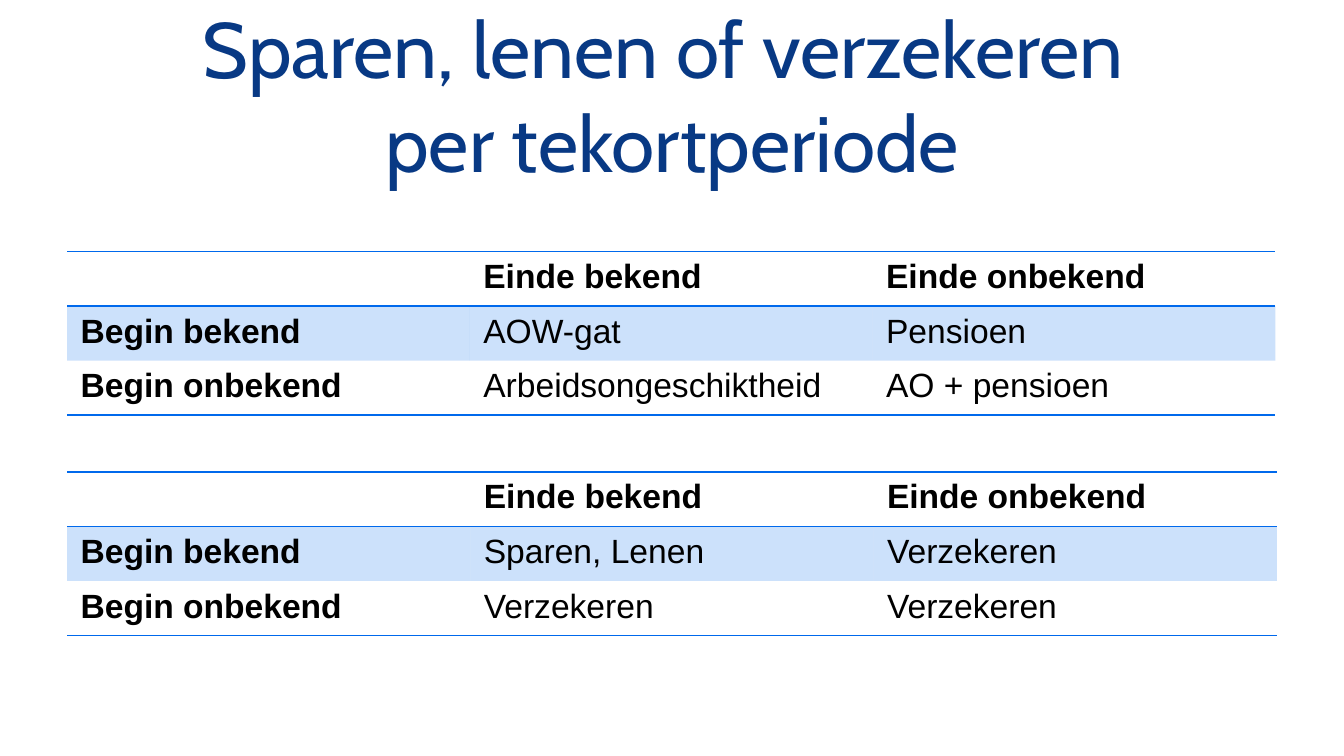
from lxml import etree
from pptx import Presentation
from pptx.dml.color import RGBColor
from pptx.enum.text import MSO_ANCHOR, PP_ALIGN
from pptx.oxml.ns import qn
from pptx.util import Inches, Pt

CENTER = PP_ALIGN.CENTER
LEFT = PP_ALIGN.LEFT
MIDDLE = MSO_ANCHOR.MIDDLE

COLORS = {"title": "083984", "text": "000000", "accent": "0069EC"}
NO_STYLE = "{2D5ABB26-0587-4C30-8999-92F81FD0307C}"
HEADER = ["", "Einde bekend", "Einde onbekend"]


def add_text(tf, text, font="Arial", size=18, color="text", bold=False, align=LEFT):
    p = tf.paragraphs[0]
    p.text = text
    p.alignment = align
    for f in [p.font] + [r.font for r in p.runs]:
        f.name = font
        f.size = Pt(size)
        f.bold = bold
        f.color.rgb = RGBColor.from_string(COLORS[color])


class SlideBuilder:
    def __init__(self, slide):
        self.slide = slide
        self.table_height = 1.22
        self.line_width = 1
        self.band_alpha = 20

    def title(self, text, left, top, width, height):
        tf = self.slide.shapes.add_textbox(
            Inches(left), Inches(top), Inches(width), Inches(height)
        ).text_frame
        tf.word_wrap = True
        tf.vertical_anchor = MIDDLE
        add_text(tf, text, font="Cabin", size=42, color="title", align=CENTER)

    def border(self, cell, side):
        ln = etree.SubElement(cell._tc.get_or_add_tcPr(), qn(f"a:ln{side}"))
        ln.set("w", str(Pt(self.line_width)))
        fill = etree.SubElement(ln, qn("a:solidFill"))
        etree.SubElement(fill, qn("a:srgbClr"), val=COLORS["accent"])

    def band(self, cell):
        cell.fill.solid()
        cell.fill.fore_color.rgb = RGBColor.from_string(COLORS["accent"])
        clr = cell._tc.tcPr.find(qn("a:solidFill")).find(qn("a:srgbClr"))
        etree.SubElement(clr, qn("a:alpha"), val=str(self.band_alpha * 1000))

    def table(self, rows, left, top, width):
        n_rows, n_cols = len(rows), len(rows[0])
        table = self.slide.shapes.add_table(
            n_rows, n_cols, Inches(left), Inches(top),
            Inches(width), Inches(self.table_height)
        ).table
        table._tbl.tblPr.find(qn("a:tableStyleId")).text = NO_STYLE
        table.horz_banding = False
        for i, row in enumerate(rows):
            for j, text in enumerate(row):
                cell = table.cell(i, j)
                add_text(cell.text_frame, text, bold=i == 0 or j == 0)
                if i == 0:
                    self.border(cell, "T")
                if i in (0, n_rows - 1):
                    self.border(cell, "B")
                if i % 2:
                    self.band(cell)
                else:
                    cell.fill.background()


def main():
    prs = Presentation()
    prs.slide_width = Inches(10)
    prs.slide_height = prs.slide_width * 9 // 16
    s = SlideBuilder(prs.slides.add_slide(prs.slide_layouts[6]))
    s.title("Sparen, lenen of verzekeren \vper tekortperiode", 0.5, 0.23, 9, 0.94)
    s.table([
        HEADER,
        ["Begin bekend", "Sparen, Lenen", "Verzekeren"],
        ["Begin onbekend", "Verzekeren", "Verzekeren"],
    ], 0.5, 3.51, 9)
    s.table([
        HEADER,
        ["Begin bekend", "AOW-gat", "Pensioen"],
        ["Begin onbekend", "Arbeidsongeschiktheid", "AO + pensioen"],
    ], 0.5, 1.87, 8.99)
    prs.save("out.pptx")


if __name__ == "__main__":
    main()
